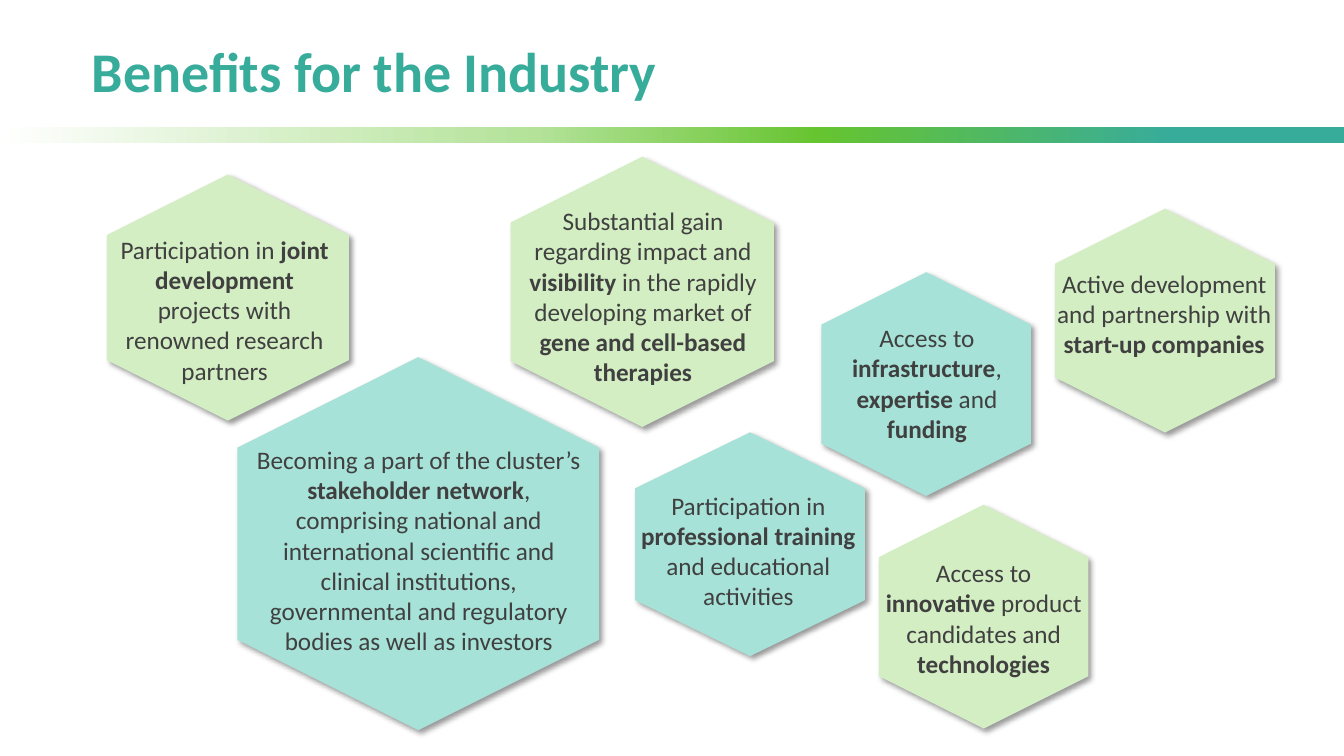
from dataclasses import dataclass

from lxml.etree import SubElement
from pptx import Presentation
from pptx.dml.color import RGBColor
from pptx.enum.shapes import MSO_SHAPE
from pptx.enum.text import MSO_ANCHOR, MSO_AUTO_SIZE as AutoSize, PP_ALIGN
from pptx.oxml.ns import qn
from pptx.shapes.autoshape import Shape
from pptx.slide import Slide
from pptx.text.text import TextFrame
from pptx.util import Cm, Pt

WHITE = RGBColor(0xFF, 0xFF, 0xFF)
LIGHT_GREEN = RGBColor(0xB3, 0xE2, 0x98)
GREEN = RGBColor(0x66, 0xC4, 0x30)
TEAL = RGBColor(0x38, 0xAC, 0x9A)
PALE_GREEN = RGBColor(0xD3, 0xEE, 0xC3)
PALE_TEAL = RGBColor(0xA6, 0xE2, 0xD8)
DARK_GREY = RGBColor(0x40, 0x40, 0x40)
BLACK = RGBColor(0, 0, 0)

FONT = "Calibri"
SLIDE_WIDTH, SLIDE_HEIGHT = Cm(33.87), Cm(19.05)
BAND_STOPS = [(0, WHITE), (40, LIGHT_GREEN), (61, GREEN), (87, TEAL)]


@dataclass(frozen=True)
class Area:
    """A frame in centimetres."""
    left: float
    top: float
    width: float
    height: float

    def lengths(self) -> tuple[Cm, Cm, Cm, Cm]:
        return Cm(self.left), Cm(self.top), Cm(self.width), Cm(self.height)


@dataclass(frozen=True)
class Benefit:
    """A hexagon (frame before its quarter turn) and its text, bold between asterisks."""
    color: RGBColor
    hexagon: Area
    label: Area
    text: str


BENEFITS = [
    Benefit(PALE_GREEN, Area(21.97, 12.9, 5.64, 5.28), Area(21.97, 13.92, 5.64, 4.11),
            "Access to *innovative* product candidates and *technologies*"),
    Benefit(PALE_TEAL, Area(20.52, 7.04, 5.64, 5.28), Area(20.68, 8, 5.36, 3.33),
            "Access to *infrastructure*, *expertise* and *funding*"),
    Benefit(PALE_TEAL, Area(16.08, 10.82, 5.64, 5.79), Area(15.9, 12.22, 5.92, 3.33),
            "Participation in *professional training *and educational activities"),
    Benefit(PALE_GREEN, Area(26.54, 5.31, 5.64, 5.54), Area(26.39, 6.63, 5.9, 3.33),
            "Active development and partnership with *start-up companies*"),
    Benefit(PALE_TEAL, Area(5.84, 9.14, 9.4, 9.12), Area(6.15, 11.07, 8.81, 5.64),
            "Becoming a part of the cluster’s *stakeholder network*, comprising national "
            "and international scientific and clinical institutions, governmental and "
            "regulatory bodies as well as investors"),
    Benefit(PALE_GREEN, Area(2.64, 4.45, 6.2, 6.1), Area(2.74, 5.77, 5.84, 4.11),
            "Participation in *joint development *projects with renowned research partners"),
    Benefit(PALE_GREEN, Area(12.78, 4.04, 6.81, 6.63), Area(12.8, 5.05, 6.81, 4.88),
            "Substantial gain regarding impact and *visibility* in the rapidly developing "
            "market of *gene and cell-based therapies*"),
]


def write_text(frame: TextFrame, text: str, *, size: float, color: RGBColor,
               align: PP_ALIGN, line_spacing: float = 1.0) -> None:
    """Fill the first paragraph, with bold spans between asterisks."""
    para = frame.paragraphs[0]
    para.alignment = align
    para.line_spacing = line_spacing
    for index, part in enumerate(text.split("*")):
        if part:
            span = para.add_run()
            span.text = part
            span.font.name = FONT
            span.font.size = Pt(size)
            span.font.color.rgb = color
            span.font.bold = index % 2 == 1


def add_drop_shadow(shape: Shape) -> None:
    shape.shadow.inherit = False
    effects = shape.element.spPr.find(qn("a:effectLst"))
    shadow = SubElement(effects, qn("a:outerShdw"), blurRad=str(Pt(4)), dist=str(Pt(3)),
                        dir=str(45 * 60000), algn="tl", rotWithShape="0")
    tint = SubElement(shadow, qn("a:srgbClr"), val=str(BLACK))
    SubElement(tint, qn("a:alpha"), val="40000")


def add_band(page: Slide) -> None:
    band = page.shapes.add_shape(MSO_SHAPE.RECTANGLE, 0, Cm(3.2), SLIDE_WIDTH, Cm(0.41))
    band.shadow.inherit = False
    band.line.fill.background()
    band.fill.gradient()
    band.fill.gradient_angle = 0
    stops = band.element.spPr.find(".//" + qn("a:gsLst"))
    for stop in list(stops):
        stops.remove(stop)
    for percent, color in BAND_STOPS:
        stop = SubElement(stops, qn("a:gs"), pos=str(percent * 1000))
        SubElement(stop, qn("a:srgbClr"), val=str(color))


def add_title(page: Slide, text: str) -> None:
    title = page.shapes.title
    title.left, title.top, title.width, title.height = Area(2.06, 0.99, 21.23, 2.49).lengths()
    title.text_frame.vertical_anchor = MSO_ANCHOR.TOP
    title.text_frame.auto_size = AutoSize.NONE
    write_text(title.text_frame, text, size=40, color=TEAL,
               align=PP_ALIGN.LEFT, line_spacing=0.9)


def add_benefit(page: Slide, benefit: Benefit) -> None:
    group = page.shapes.add_group_shape()
    hexagon = group.shapes.add_shape(MSO_SHAPE.HEXAGON, *benefit.hexagon.lengths())
    hexagon.rotation = 90
    hexagon.fill.solid()
    hexagon.fill.fore_color.rgb = benefit.color
    hexagon.line.fill.background()
    add_drop_shadow(hexagon)

    box = group.shapes.add_textbox(*benefit.label.lengths())
    box.text_frame.word_wrap = True
    box.text_frame.auto_size = AutoSize.SHAPE_TO_FIT_TEXT
    write_text(box.text_frame, benefit.text, size=18, color=DARK_GREY,
               align=PP_ALIGN.CENTER)


def main() -> None:
    deck = Presentation()
    deck.slide_width, deck.slide_height = SLIDE_WIDTH, SLIDE_HEIGHT
    page = deck.slides.add_slide(deck.slide_layouts.get_by_name("Title Only"))
    add_band(page)
    add_title(page, "*Benefits for the Industry*")
    for benefit in BENEFITS:
        add_benefit(page, benefit)
    deck.save("out.pptx")


if __name__ == "__main__":
    main()
